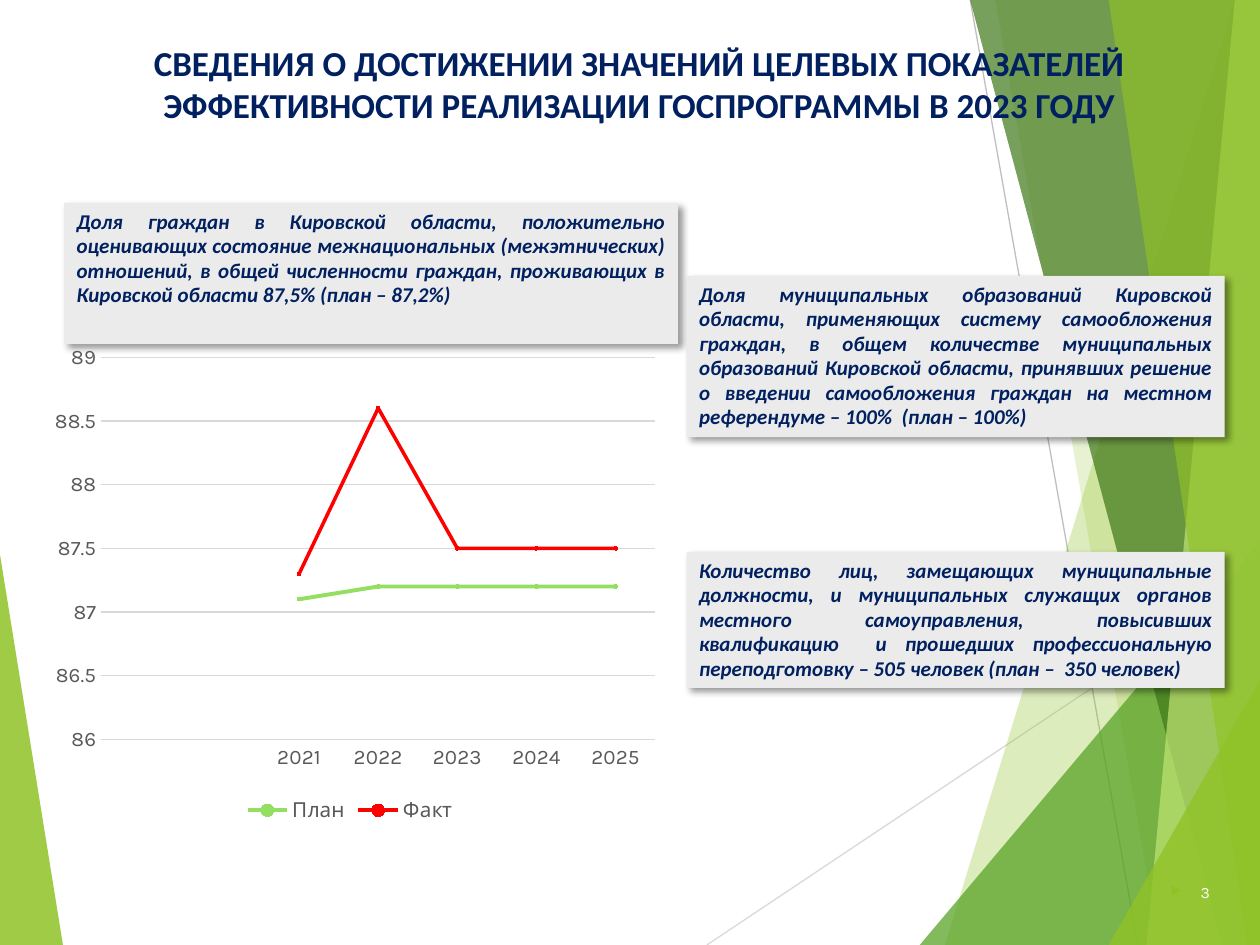
from typing import NamedTuple

from lxml import etree
from pptx import Presentation
from pptx import util as u
from pptx.chart import data as cd
from pptx.dml import color as dc
from pptx.enum import chart as ec, shapes as es, text as et
from pptx.oxml import parse_xml
from pptx.oxml import ns

COLS, ROWS = 100, 75
CELL = u.Inches(10) // COLS
HUES = {"navy": "002060", "box": "EBEBEB", "leaf": "90C226", "green": "54A021",
        "dark": "3F7819", "pale": "C0E474", "rule": "D9D9D9", "grey": "BFBFBF",
        "label": "595959", "plan": "94DE61", "fact": "FF0000", "white": "FFFFFF"}


class Facet(NamedTuple):
    hue: str
    alpha: int
    points: list


class Ray(NamedTuple):
    hue: str
    start: tuple
    end: tuple


class Note(NamedTuple):
    area: tuple
    words: str


class Trend(NamedTuple):
    name: str
    values: list
    hue: str
    width: float
    dot: str


WEDGE = Facet("leaf", 85, [(0, 43.9), (4.9, 75), (0, 75)])
RAYS = [Ray("rule", (56.1, 75), (100, 45.7)), Ray("grey", (77, 0), (90.3, 75))]
FACETS = [
    Facet("leaf", 30, [(97.5, 0), (75.4, 75), (100, 75), (100, 0)]),
    Facet("leaf", 20, [(78.8, 0), (91.9, 75), (100, 75), (100, 0)]),
    Facet("green", 72, [(72.6, 75), (100, 42.9), (100, 75)]),
    Facet("dark", 70, [(76.7, 0), (97, 75), (100, 75), (100, 0)]),
    Facet("pale", 70, [(98.1, 0), (90.7, 75), (100, 75), (100, 0)]),
    Facet("leaf", 65, [(88.3, 0), (98.6, 75), (100, 75), (99.8, 0)]),
    Facet("leaf", 80, [(88.1, 75), (100, 53.5), (100, 75)]),
]
NOTES = [
    Note((5.1, 16.1, 48.7, 11.2),
         "Доля граждан в Кировской области, положительно оценивающих состояние "
         "межнациональных (межэтнических) отношений, в общей численности граждан, "
         "проживающих в Кировской области 87,5% (план – 87,2%)"),
    Note((54.5, 21.9, 42.7, 12.8),
         "Доля муниципальных образований Кировской области, применяющих систему "
         "самообложения граждан, в общем количестве муниципальных образований "
         "Кировской области, принявших решение о введении самообложения граждан "
         "на местном референдуме – 100%  (план – 100%) "),
    Note((54.5, 43.8, 42.7, 10.8),
         "Количество лиц, замещающих муниципальные должности, и муниципальных "
         "служащих органов местного самоуправления, повысивших квалификацию  и "
         "прошедших профессиональную переподготовку – 505 человек "
         "(план –  350 человек)"),
]
YEARS = ["", "", "2021", "2022", "2023", "2024", "2025"]
TRENDS = [
    Trend("План", [None, None, 87.1, 87.2, 87.2, 87.2, 87.2], "plan", 2.23, "leaf"),
    Trend("Факт", [None, None, 87.3, 88.6, 87.5, 87.5, 87.5], "fact", 2, "green"),
]


def grid(*cells: float) -> list:
    return [round(c * CELL) for c in cells]


def rgb(hue: str) -> dc.RGBColor:
    return dc.RGBColor.from_string(HUES[hue])


def paint(fill, hue: str) -> None:
    fill.solid()
    fill.fore_color.rgb = rgb(hue)


def style(font, size: float, hue: str, face: str, bold=False, italic=False) -> None:
    font.size, font.name, font.bold, font.italic = u.Pt(size), face, bold, italic
    font.color.rgb = rgb(hue)


def draw_facet(slide, facet: Facet) -> None:
    first, *rest = facet.points
    pen = slide.shapes.build_freeform(*first, scale=CELL)
    pen.add_line_segments(rest)
    shape = pen.convert_to_shape()
    shape.shadow.inherit = False
    shape.line.fill.background()
    paint(shape.fill, facet.hue)
    tone = shape.fill._xPr.find(".//" + ns.qn("a:srgbClr"))
    etree.SubElement(tone, ns.qn("a:alpha"), val=str(facet.alpha * 1000))


def draw_ray(slide, ray: Ray) -> None:
    line = slide.shapes.add_connector(es.MSO_CONNECTOR.STRAIGHT,
                                      *grid(*ray.start, *ray.end))
    line.line.width = u.Pt(0.75)
    line.line.color.rgb = rgb(ray.hue)
    etree.SubElement(line._element.spPr, ns.qn("a:effectLst"))


def draw_title(slide, words: str) -> None:
    title = slide.shapes.title
    slide.shapes._spTree.append(title._element)
    title.left, title.top, title.width, title.height = grid(4.3, 2.8, 92.9, 7.7)
    frame = title.text_frame
    frame.text = words
    frame.vertical_anchor = et.MSO_ANCHOR.TOP
    frame.auto_size = et.MSO_AUTO_SIZE.NONE
    frame.paragraphs[0].alignment = et.PP_ALIGN.CENTER
    style(frame.paragraphs[0].font, 20, "navy", "Calibri", True)


def draw_note(slide, note: Note) -> None:
    box = slide.shapes.add_shape(es.MSO_SHAPE.RECTANGLE, *grid(*note.area))
    paint(box.fill, "box")
    box.line.fill.background()
    box.shadow.inherit = False
    glow = box._element.spPr.find(ns.qn("a:effectLst"))
    glow.append(parse_xml(
        f'<a:outerShdw {ns.nsdecls("a")} blurRad="{u.Pt(4)}" dist="{u.Pt(3)}" '
        'dir="2700000" algn="tl" rotWithShape="0"><a:srgbClr val="000000">'
        '<a:alpha val="40000"/></a:srgbClr></a:outerShdw>'))
    frame = box.text_frame
    frame.word_wrap = True
    frame.vertical_anchor = et.MSO_ANCHOR.TOP
    frame.text = note.words
    para = frame.paragraphs[0]
    para.alignment = et.PP_ALIGN.JUSTIFY
    para.line_spacing, para.space_before = u.Pt(14), u.Pt(2.4)
    style(para.font, 12, "navy", "Calibri", True, True)


def draw_chart(slide) -> None:
    data = cd.CategoryChartData()
    data.categories = YEARS
    for trend in TRENDS:
        data.add_series(trend.name, trend.values)
    chart = slide.shapes.add_chart(ec.XL_CHART_TYPE.LINE_MARKERS,
                                   *grid(3.1, 26.8, 49.4, 38.9), data).chart
    style(chart.font, 11.8, "label", "Karla")
    chart.has_title = False
    chart.has_legend = True
    chart.legend.position = ec.XL_LEGEND_POSITION.BOTTOM
    chart.legend.include_in_layout = False
    chart.plots[0].vary_by_categories = False
    for trend, line in zip(TRENDS, chart.plots[0].series):
        line.smooth = False
        line.format.line.width = u.Pt(trend.width)
        line.format.line.color.rgb = rgb(trend.hue)
        line.marker.style = ec.XL_MARKER_STYLE.CIRCLE
        line.marker.size = 2
        paint(line.marker.format.fill, trend.dot)
        line.marker.format.line.color.rgb = rgb(trend.hue)
    for axis in (chart.category_axis, chart.value_axis):
        axis.major_tick_mark = axis.minor_tick_mark = ec.XL_TICK_MARK.NONE
        style(axis.tick_labels.font, 11.8, "label", "Karla")
    scale = chart.value_axis
    scale.minimum_scale, scale.maximum_scale, scale.major_unit = 86, 89, 0.5
    scale.format.line.fill.background()
    for rule in (scale.major_gridlines, chart.category_axis):
        rule.format.line.width = u.Pt(0.75)
        rule.format.line.color.rgb = rgb("rule")
    plot = chart._chartSpace.chart.plotArea
    for old in plot.findall(ns.qn("c:layout")):
        plot.remove(old)
    parts = {"layoutTarget": "inner", "xMode": "edge", "yMode": "edge",
             "x": 0.1, "y": 0.04, "w": 0.89, "h": 0.78}
    inner = "".join(f'<c:{tag} val="{val}"/>' for tag, val in parts.items())
    plot.insert(0, parse_xml(f'<c:layout {ns.nsdecls("c")}><c:manualLayout>'
                             f'{inner}</c:manualLayout></c:layout>'))


def draw_page(slide, words: str) -> None:
    frame = slide.shapes.add_textbox(*grid(91.4, 68.8, 5.6, 4)).text_frame
    frame.word_wrap = True
    frame.vertical_anchor = et.MSO_ANCHOR.MIDDLE
    frame.text = words
    para = frame.paragraphs[0]
    para.alignment = et.PP_ALIGN.RIGHT
    para.space_before = u.Pt(10)
    style(para.font, 9, "white", "Karla")
    props = para._p.get_or_add_pPr()
    indent = u.Inches(0.24)
    props.set("marL", str(indent))
    props.set("indent", str(-indent))
    tint = etree.Element(ns.qn("a:buClr"))
    etree.SubElement(tint, ns.qn("a:srgbClr"), val=HUES["leaf"])
    size = etree.Element(ns.qn("a:buSzPct"), val="80000")
    mark = etree.Element(ns.qn("a:buChar"), char="▶")
    for place, part in enumerate((tint, size, mark), 1):
        props.insert(place, part)


def main() -> None:
    deck = Presentation()
    deck.slide_width, deck.slide_height = COLS * CELL, ROWS * CELL
    slide = deck.slides.add_slide(deck.slide_layouts[5])
    draw_facet(slide, WEDGE)
    for ray in RAYS:
        draw_ray(slide, ray)
    for facet in FACETS:
        draw_facet(slide, facet)
    draw_title(slide, "СВЕДЕНИЯ О ДОСТИЖЕНИИ ЗНАЧЕНИЙ ЦЕЛЕВЫХ ПОКАЗАТЕЛЕЙ "
                      "ЭФФЕКТИВНОСТИ РЕАЛИЗАЦИИ ГОСПРОГРАММЫ В 2023 ГОДУ")
    for note in NOTES:
        draw_note(slide, note)
    draw_chart(slide)
    draw_page(slide, "3")
    deck.save("out.pptx")


if __name__ == "__main__":
    main()
